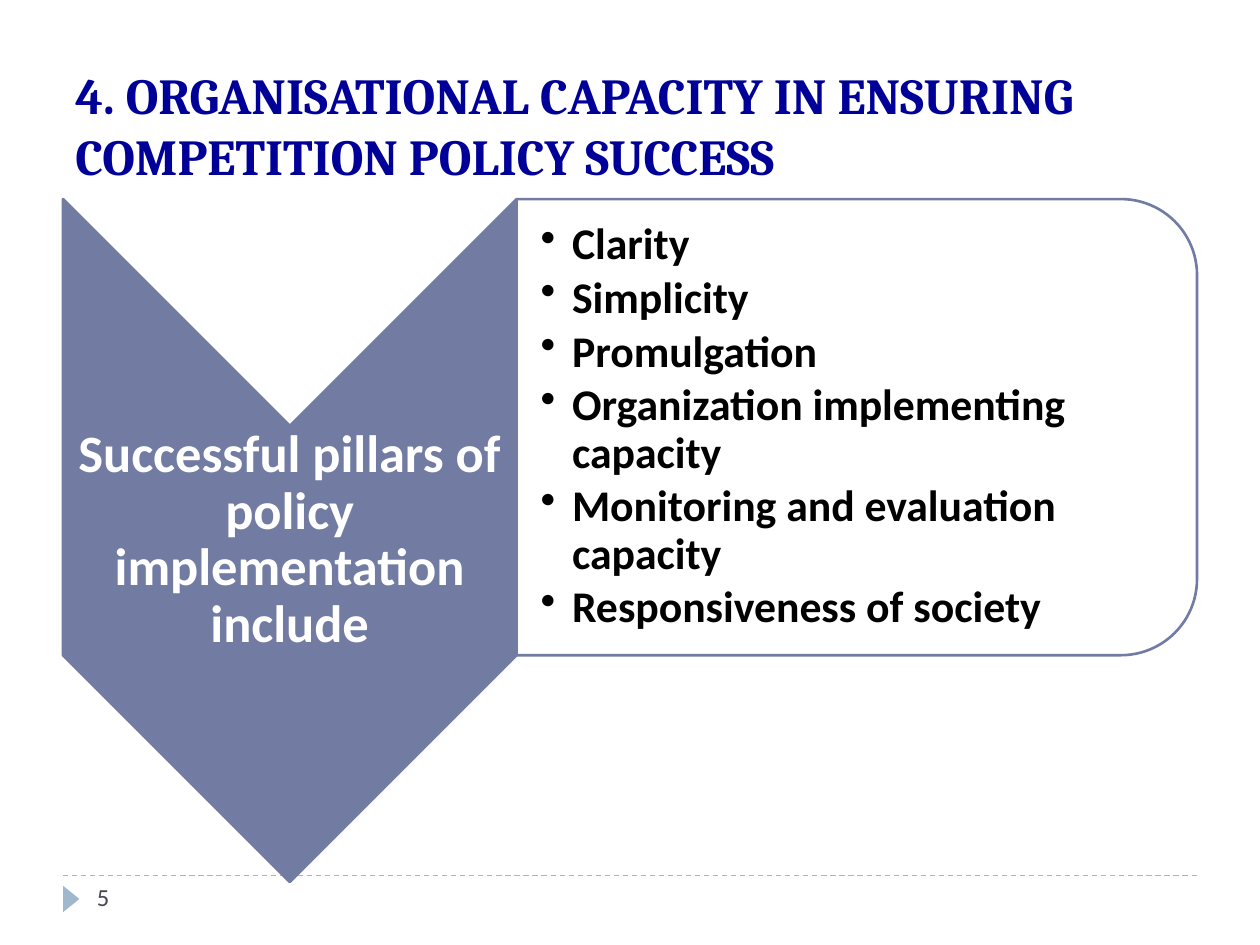
import pptx
import pptx.util
import pptx.dml.color
import pptx.enum.dml
import pptx.enum.shapes
import pptx.enum.text
import pptx.oxml.ns
from lxml import etree

Inches = pptx.util.Inches
Pt = pptx.util.Pt
SHAPES = pptx.enum.shapes.MSO_SHAPE
ANCHOR = pptx.enum.text.MSO_ANCHOR
ALIGN = pptx.enum.text.PP_ALIGN

SLATE = "727CA3"
PALE_BLUE = "9FB8CD"
PILLARS = [
    "Clarity",
    "Simplicity",
    "Promulgation",
    "Organization implementing capacity",
    "Monitoring and evaluation capacity",
    "Responsiveness of society",
]


def color(value):
    return pptx.dml.color.RGBColor.from_string(value)


def add_element(parent, tag, **attributes):
    return etree.SubElement(parent, pptx.oxml.ns.qn(tag), attributes)


def add_turned_shape(slide, kind, box, fill, line=None):
    """Add a shape turned by 90 degrees so that it covers the given box."""
    left, top, width, height = box
    shape = slide.shapes.add_shape(
        kind,
        Inches(left + (width - height) / 2), Inches(top + (height - width) / 2),
        Inches(height), Inches(width))
    shape.rotation = 90
    shape.shadow.inherit = False
    shape.fill.solid()
    shape.fill.fore_color.rgb = color(fill)
    if line:
        shape.line.color.rgb = color(line)
        shape.line.width = Pt(1.5)
    else:
        shape.line.fill.background()
    return shape


def add_text(slide, box, lines, font, size, text_color, bold=True,
             anchor=ANCHOR.MIDDLE, insets=(0.02, 0.02, 0.02, 0.02),
             align=ALIGN.LEFT, spacing=None, after=None, bullet=None):
    text_box = slide.shapes.add_textbox(*[Inches(length) for length in box])
    frame = text_box.text_frame
    frame.word_wrap = True
    frame.vertical_anchor = anchor
    (frame.margin_left, frame.margin_top,
     frame.margin_right, frame.margin_bottom) = [Inches(inset) for inset in insets]
    for index, line in enumerate(lines):
        paragraph = frame.paragraphs[0] if index == 0 else frame.add_paragraph()
        paragraph.text = line
        paragraph.alignment = align
        paragraph.line_spacing = spacing
        paragraph.space_after = after
        if bullet:
            properties = paragraph._p.get_or_add_pPr()
            properties.set("marL", str(Inches(0.25)))
            properties.set("indent", str(Inches(-0.25)))
            add_element(properties, "a:buChar", char=bullet)
        paragraph.font.name = font
        paragraph.font.size = Pt(size)
        paragraph.font.bold = bold
        paragraph.font.color.rgb = color(text_color)


def add_title(slide, box):
    add_text(slide, box,
             ["4. ORGANISATIONAL CAPACITY IN ENSURING COMPETITION POLICY SUCCESS"],
             "Cambria", 28.8, "000099", anchor=ANCHOR.BOTTOM,
             insets=(0.1, 0.05, 0.1, 0.05))


def add_chevron(slide, box):
    left, top, width, height = box
    add_turned_shape(slide, SHAPES.CHEVRON, box, SLATE, SLATE)
    # The label sits between the notch and the shoulders of the chevron
    point = width / 2
    add_text(slide, (left, top + point, width, height - 2 * point),
             ["Successful pillars of policy implementation include"],
             "Calibri", 30, "FFFFFF", align=ALIGN.CENTER, spacing=0.9)


def add_pillars(slide, box):
    left, top, width, height = box
    panel = add_turned_shape(slide, SHAPES.ROUND_2_SAME_RECTANGLE, box, "FFFFFF", SLATE)
    fill_color = panel._element.spPr.find(".//" + pptx.oxml.ns.qn("a:srgbClr"))
    add_element(fill_color, "a:alpha", val="90000")
    # The list keeps clear of the rounded corners
    margin = 0.18
    add_text(slide, (left, top + margin, width - margin, height - 2 * margin),
             PILLARS, "Calibri", 25, "000000", insets=(0.19, 0.02, 0.02, 0.02),
             spacing=0.9, after=Pt(3.75), bullet="•")


def add_footer(slide, box):
    left, top, width, height = box
    rule = slide.shapes.add_connector(
        pptx.enum.shapes.MSO_CONNECTOR.STRAIGHT,
        Inches(left), Inches(top), Inches(left + width), Inches(top))
    rule.line.color.rgb = color(PALE_BLUE)
    rule.line.width = Pt(0.75)
    rule.line.dash_style = pptx.enum.dml.MSO_LINE.DASH
    add_element(rule._element.spPr, "a:effectLst")
    # Page marker and number
    add_turned_shape(slide, SHAPES.ISOSCELES_TRIANGLE,
                     (left, top + 0.08, 0.13, 0.21), PALE_BLUE)
    add_text(slide, (left + 0.17, top, 2.17, height), ["5"], "Calibri", 14,
             "464653", bold=False, anchor=ANCHOR.TOP, insets=(0.1, 0.05, 0.1, 0.05))


def main():
    presentation = pptx.Presentation()
    presentation.slide_width = Inches(10)
    presentation.slide_height = Inches(7.5)
    slide = presentation.slides.add_slide(presentation.slide_layouts[6])
    add_footer(slide, (0.5, 6.95, 9, 0.4))
    add_title(slide, (0.5, 0.5, 9, 1.02))
    add_chevron(slide, (0.5, 1.58, 3.6, 5.42))
    add_pillars(slide, (4.1, 1.58, 5.4, 3.62))
    presentation.save("out.pptx")


if __name__ == "__main__":
    main()
